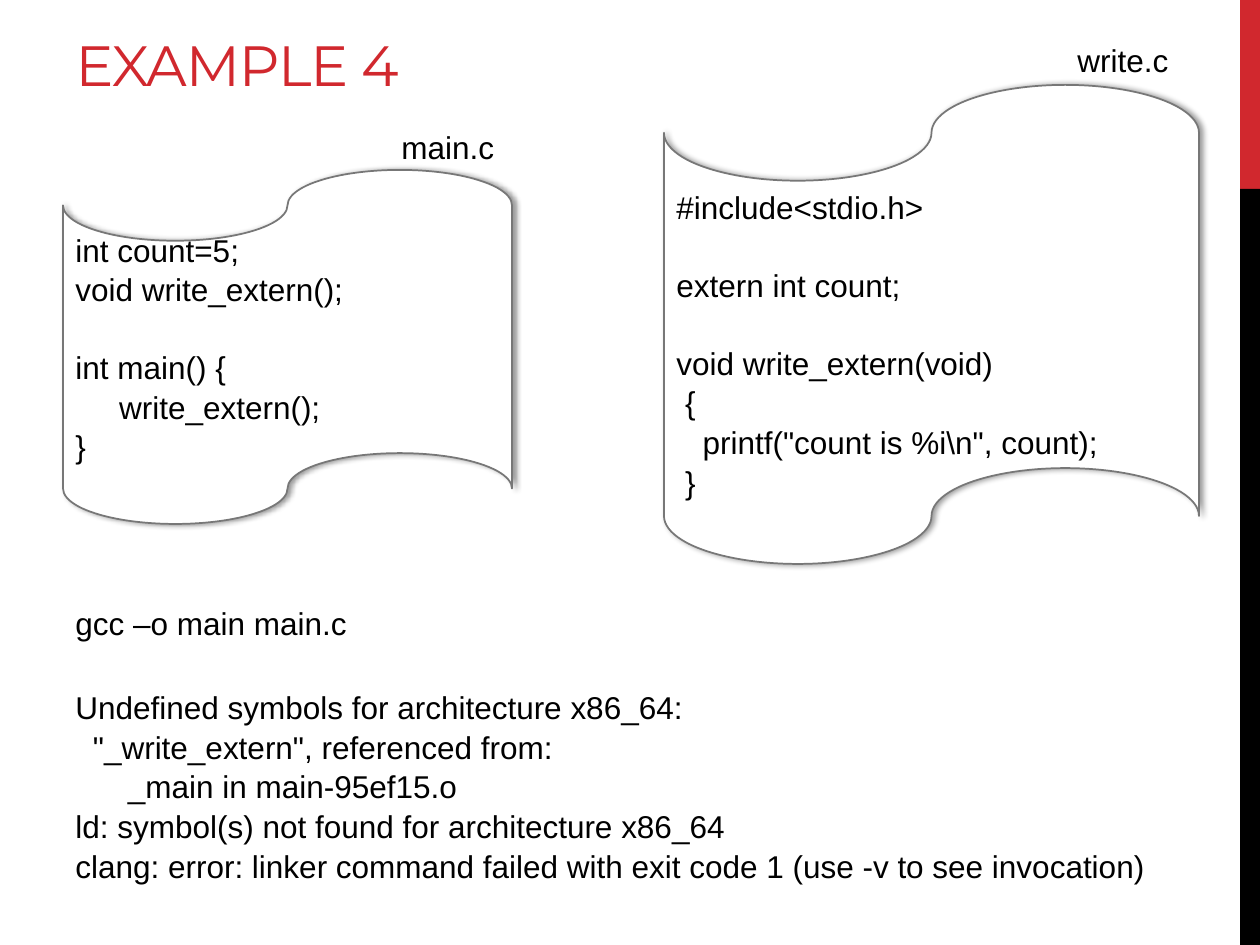
from lxml.etree import SubElement
from pptx import Presentation
from pptx.dml.color import RGBColor
from pptx.enum.shapes import MSO_SHAPE
from pptx.enum.text import MSO_ANCHOR, MSO_AUTO_SIZE, PP_ALIGN
from pptx.oxml.ns import qn
from pptx.util import Emu, Pt

PX_PER_INCH = 126
RED = RGBColor(0xD1, 0x28, 0x2E)
BLACK = RGBColor(0, 0, 0)
WHITE = RGBColor(255, 255, 255)
GRAY = RGBColor(0x77, 0x77, 0x77)
LINE_HEIGHT = 38
LINE_SPACING = 1.05
PADDING = 6

MAIN_CODE = """int count=5;
void write_extern();

int main() {
     write_extern();
}"""
WRITE_CODE = r"""#include<stdio.h>

extern int count;

void write_extern(void)
 {
   printf("count is %i\n", count);
 }"""
LINKER_ERROR = """Undefined symbols for architecture x86_64:
  "_write_extern", referenced from:
      _main in main-95ef15.o
ld: symbol(s) not found for architecture x86_64
clang: error: linker command failed with exit code 1 (use -v to see invocation)"""


def px(length):
    return Emu(round(length * 914400 / PX_PER_INCH))


def box(left, top, width, height):
    return px(left), px(top), px(width), px(height)


def write_text(frame, text, *, font="Arial", size=18, color=BLACK,
               line_spacing=LINE_SPACING, tracking=None):
    """Write one paragraph per line; an empty line becomes space before the next."""
    paragraph = frame.paragraphs[0]
    gap = 0
    for number, line in enumerate(text.split("\n")):
        if not line:
            gap += LINE_HEIGHT
            continue
        if number:
            paragraph = frame.add_paragraph()
        paragraph.alignment = PP_ALIGN.LEFT
        paragraph.line_spacing = line_spacing
        paragraph.space_before = px(gap)
        gap = 0
        run = paragraph.add_run()
        run.text = line
        run.font.name = font
        run.font.size = Pt(size)
        run.font.color.rgb = color
        if tracking is not None:
            run.font._element.set("spc", str(round(tracking * 100)))


def add_title(slide, text):
    title = slide.shapes.title
    title.left, title.top, title.width, title.height = box(63, 21, 1137, 83)
    title.text_frame.vertical_anchor = MSO_ANCHOR.BOTTOM
    title.text_frame.auto_size = MSO_AUTO_SIZE.NONE
    write_text(title.text_frame, text, font="Montserrat", size=32.4,
               color=RED, line_spacing=1, tracking=-0.6)


def add_side_band(slide, top, height, color):
    band = slide.shapes.add_shape(MSO_SHAPE.RECTANGLE, *box(1240, top, 20, height))
    band.shadow.inherit = False
    band.fill.solid()
    band.fill.fore_color.rgb = color
    band.line.fill.background()


def add_soft_shadow(shape):
    shape.shadow.inherit = False
    effects = shape._element.spPr.find(qn("a:effectLst"))
    shadow = SubElement(effects, qn("a:outerShdw"), blurRad=str(Pt(3.1)),
                        dist=str(Pt(1.8)), dir="0", rotWithShape="0")
    tint = SubElement(shadow, qn("a:srgbClr"), val=str(BLACK))
    SubElement(tint, qn("a:alpha"), val="40000")


def add_code_tape(slide, area, code, lines_above=0):
    """Draw a source file as a tape, its code pushed down by lines_above."""
    tape = slide.shapes.add_shape(MSO_SHAPE.FLOWCHART_PUNCHED_TAPE, *box(*area))
    tape.fill.solid()
    tape.fill.fore_color.rgb = WHITE
    tape.line.color.rgb = GRAY
    tape.line.width = Pt(1)
    add_soft_shadow(tape)
    frame = tape.text_frame
    frame.word_wrap = True
    frame.vertical_anchor = MSO_ANCHOR.MIDDLE
    frame.margin_top = px(PADDING + lines_above * LINE_HEIGHT)
    write_text(frame, code)


def add_label(slide, area, text):
    frame = slide.shapes.add_textbox(*box(*area)).text_frame
    frame.word_wrap = False
    frame.auto_size = MSO_AUTO_SIZE.SHAPE_TO_FIT_TEXT
    write_text(frame, text)


def main():
    deck = Presentation()
    deck.slide_width, deck.slide_height = px(1260), px(945)
    slide = deck.slides.add_slide(deck.slide_layouts[5])

    add_side_band(slide, 0, 189, RED)
    add_side_band(slide, 189, 756, BLACK)
    add_title(slide, "EXAMPLE 4")

    add_code_tape(slide, (63, 170, 449, 354), MAIN_CODE)
    add_label(slide, (389, 120, 120, 50), "main.c")
    add_code_tape(slide, (664, 85, 535, 479), WRITE_CODE, lines_above=1)
    add_label(slide, (1065, 33, 120, 50), "write.c")

    add_label(slide, (63, 596, 300, 50), "gcc –o main main.c")
    add_label(slide, (63, 680, 1105, 204), LINKER_ERROR)

    deck.save("out.pptx")


if __name__ == "__main__":
    main()
